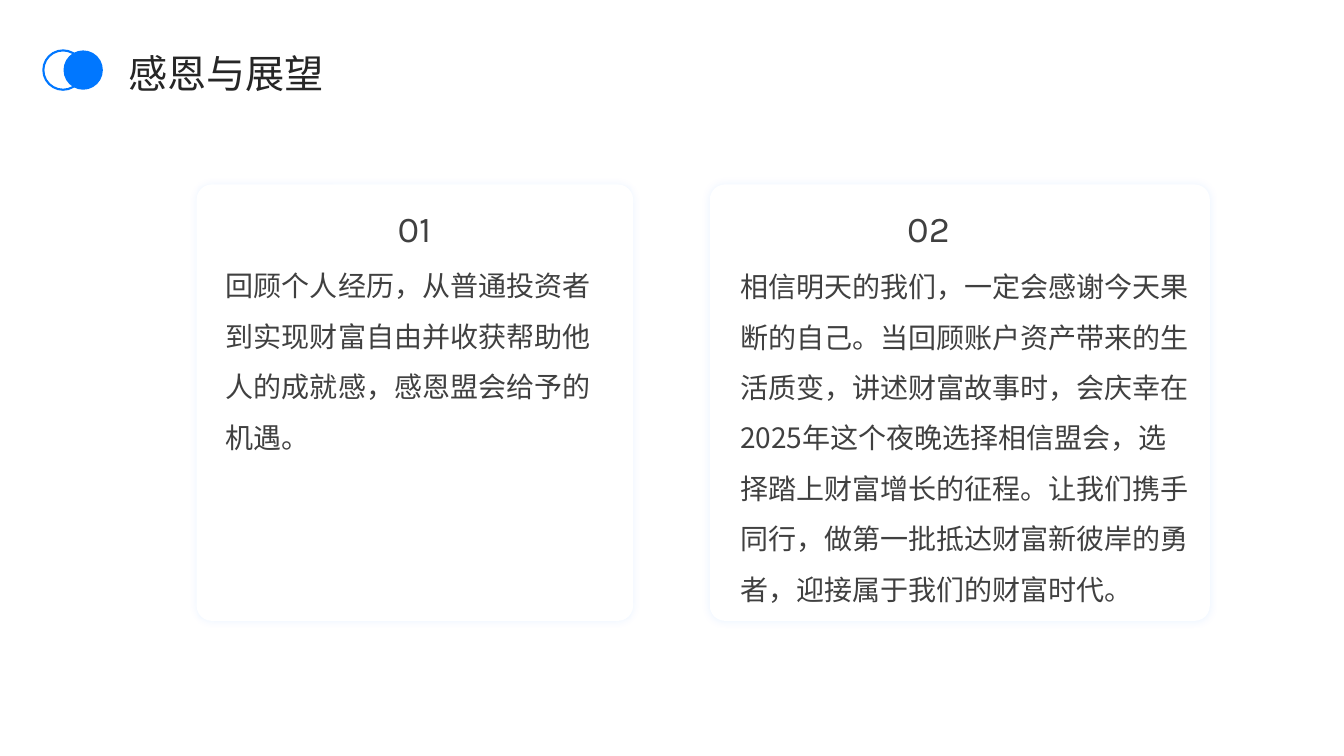
from dataclasses import dataclass

from lxml.etree import SubElement
from pptx import Presentation
from pptx.dml.color import RGBColor
from pptx.enum.shapes import MSO_SHAPE
from pptx.enum.text import MSO_ANCHOR, MSO_AUTO_SIZE, PP_ALIGN
from pptx.oxml import parse_xml
from pptx.oxml.ns import nsdecls, qn
from pptx.util import Inches, Pt


@dataclass(frozen=True)
class Theme:
    blue: str = "0077FF"
    white: str = "FFFFFF"
    heading: str = "262626"
    text: str = "404040"
    cjk_font: str = "Noto Sans CJK SC"
    number_font: str = "Karla"
    title_size: int = 28
    number_size: int = 26
    body_size: int = 20


theme = Theme()


def fill_placeholder(holder, box, text, font, size, color, spacing,
                     align=PP_ALIGN.LEFT, anchor=MSO_ANCHOR.TOP):
    """Place a placeholder, write its text and format it without a bullet."""
    holder.left, holder.top, holder.width, holder.height = map(Inches, box)
    frame = holder.text_frame
    frame.text = text
    frame.word_wrap = True
    frame.auto_size = MSO_AUTO_SIZE.NONE
    frame.vertical_anchor = anchor
    frame.margin_left = frame.margin_right = 0
    frame.margin_top = frame.margin_bottom = 0
    paragraph = frame.paragraphs[0]
    paragraph.alignment = align
    paragraph.line_spacing = spacing
    paragraph.space_before = Pt(0)
    properties = paragraph._p.get_or_add_pPr()
    properties.set("marL", "0")
    properties.set("indent", "0")
    SubElement(properties, qn("a:buNone"))
    run = paragraph.runs[0]
    run.font.name = font
    run.font.size = Pt(size)
    run.font.bold = False
    run.font.color.rgb = RGBColor.from_string(color)
    SubElement(run._r.get_or_add_rPr(), qn("a:ea")).set("typeface", font)


prs = Presentation()
prs.slide_width = Inches(13.33)
prs.slide_height = Inches(7.5)

# Comparison layout: a title and two pairs of heading and body
slide = prs.slides.add_slide(prs.slide_layouts[4])
holders = {h.placeholder_format.idx: h for h in slide.placeholders}

# Title
fill_placeholder(holders[0], (1.27, 0.44, 10.92, 0.47), "感恩与展望",
                 theme.cjk_font, theme.title_size, theme.heading, 1.2,
                 anchor=MSO_ANCHOR.MIDDLE)

# Title emblem: an outlined circle overlapped by a solid one
for left, solid in ((0.43, False), (0.63, True)):
    circle = slide.shapes.add_shape(
        MSO_SHAPE.OVAL, Inches(left), Inches(0.5), Inches(0.39), Inches(0.39))
    circle.shadow.inherit = False
    if solid:
        circle.fill.solid()
        circle.fill.fore_color.rgb = RGBColor.from_string(theme.blue)
        circle.line.fill.background()
    else:
        circle.fill.background()
        circle.line.color.rgb = RGBColor.from_string(theme.blue)
        circle.line.width = Pt(1.5)

# Cards: left, width, number left, body box, body text
cards = [
    (1.95, 4.33, 2.73, (2.24, 2.5, 3.74, 3.6),
     "回顾个人经历，从普通投资者到实现财富自由并收获帮助他人的成就感，感恩盟会给予的机遇。"),
    (7.04, 4.96, 7.83, (7.34, 2.51, 4.48, 3.72),
     "相信明天的我们，一定会感谢今天果断的自己。当回顾账户资产带来的生活质变，"
     "讲述财富故事时，会庆幸在2025年这个夜晚选择相信盟会，选择踏上财富增长的征程。"
     "让我们携手同行，做第一批抵达财富新彼岸的勇者，迎接属于我们的财富时代。"),
]
for index, (left, width, number_left, body_box, body_text) in enumerate(cards):
    card = slide.shapes.add_shape(
        MSO_SHAPE.ROUNDED_RECTANGLE,
        Inches(left), Inches(1.83), Inches(width), Inches(4.33))
    card.adjustments[0] = 0.035
    card.fill.solid()
    card.fill.fore_color.rgb = RGBColor.from_string(theme.white)
    card.line.fill.background()

    # Soft blue glow around the card
    card.element.spPr.append(parse_xml(
        f'<a:effectLst {nsdecls("a")}>'
        f'<a:outerShdw blurRad="{Pt(5.6)}" dist="0" dir="0" algn="ctr" rotWithShape="0">'
        f'<a:srgbClr val="{theme.blue}"><a:alpha val="8000"/></a:srgbClr>'
        '</a:outerShdw></a:effectLst>'))

    # Send the card behind the text
    slide.shapes.element.insert(2, card.element)

    fill_placeholder(holders[2 * index + 1], (number_left, 1.93, 2.76, 0.45),
                     f"{index + 1:02d}", theme.number_font, theme.number_size,
                     theme.text, 1.5, PP_ALIGN.CENTER, MSO_ANCHOR.MIDDLE)
    fill_placeholder(holders[2 * index + 2], body_box, body_text,
                     theme.cjk_font, theme.body_size, theme.text, 1.5)

prs.save("out.pptx")
